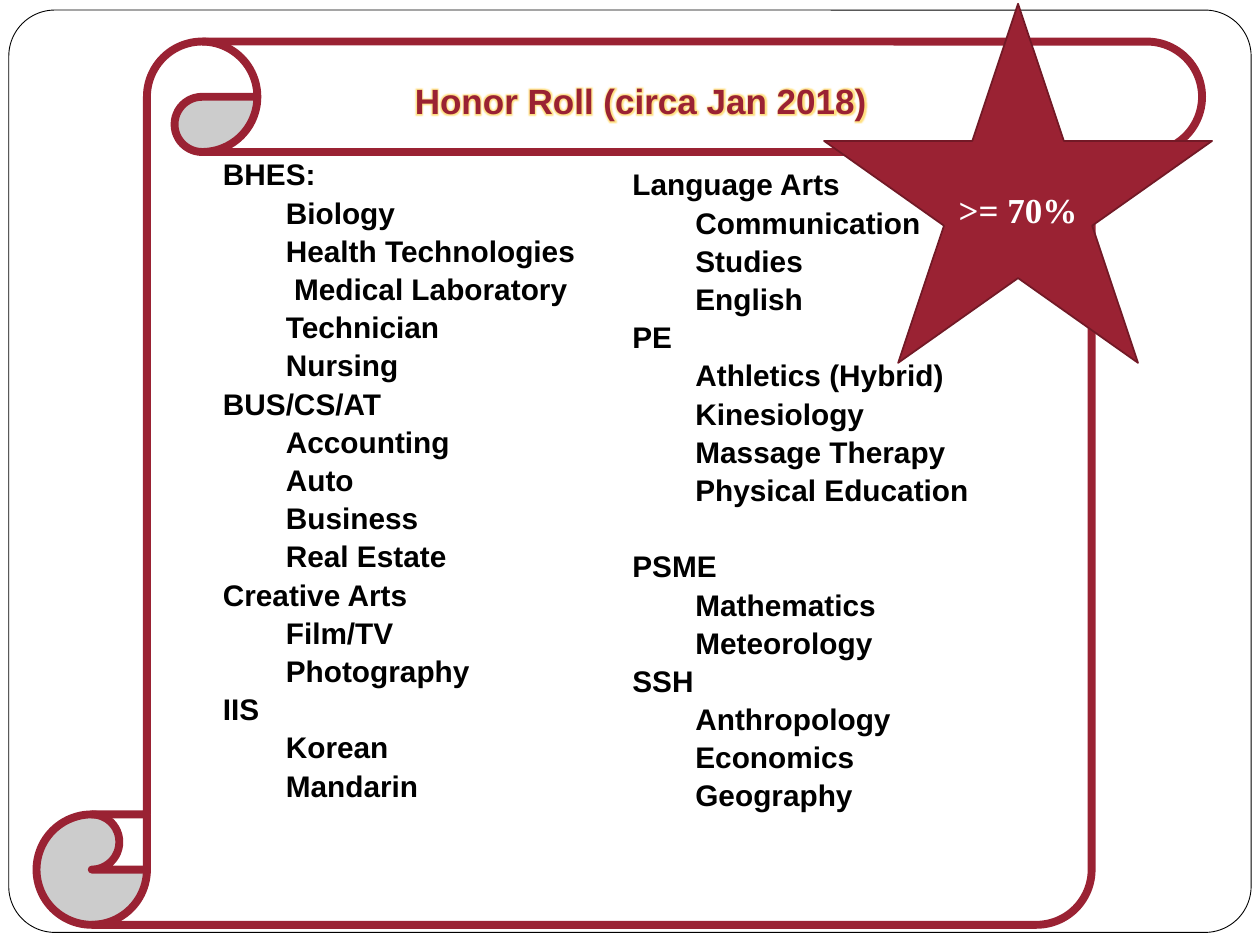
from lxml.etree import SubElement
from pptx import Presentation
from pptx.dml.color import RGBColor
from pptx.enum.shapes import MSO_SHAPE
from pptx.enum.text import MSO_ANCHOR, PP_ALIGN
from pptx.oxml.ns import qn
from pptx.util import Inches, Pt

WHITE = RGBColor(0xFF, 0xFF, 0xFF)
BLACK = RGBColor(0, 0, 0)
CRIMSON = RGBColor(0x9A, 0x22, 0x33)
DARK_CRIMSON = RGBColor(0x72, 0x19, 0x26)
GLOW = RGBColor(0xFF, 0xE0, 0x80)

TITLE = "Honor Roll (circa Jan 2018) "
THRESHOLD = ">= 70%"
LEFT_DIVISIONS = [
    ("BHES:", ["Biology", "Health Technologies",
               " Medical Laboratory Technician", "Nursing"]),
    ("BUS/CS/AT", ["Accounting", "Auto", "Business", "Real Estate"]),
    ("Creative Arts", ["Film/TV", "Photography"]),
    ("IIS", ["Korean", "Mandarin"]),
]
RIGHT_DIVISIONS = [
    ("Language Arts", ["Communication Studies", "English"]),
    ("PE", ["Athletics (Hybrid)", "Kinesiology", "Massage Therapy",
            "Physical Education"]),
    ("PSME", ["Mathematics", "Meteorology"]),
    ("SSH", ["Anthropology", "Economics", "Geography"]),
]
COLUMNS = [
    ((1.67, 1.17, 3.08, 5.31), LEFT_DIVISIONS),
    ((4.92, 1.25, 3.08, 6.06), RIGHT_DIVISIONS),
]
SPACED_DIVISION = "PSME"
LINE_SPACING = 1.07
LIST_SIZE = 17
ONE_LINE = Pt(21.8)


def add_panel(slide, kind, box, fill, line, width):
    shape = slide.shapes.add_shape(kind, *map(Inches, box))
    shape.shadow.inherit = False
    shape.fill.solid()
    shape.fill.fore_color.rgb = fill
    shape.line.color.rgb = line
    shape.line.width = Pt(width)
    return shape


def add_text_frame(slide, box):
    text_frame = slide.shapes.add_textbox(*map(Inches, box)).text_frame
    text_frame.word_wrap = True
    return text_frame


def write(paragraph, text, size, color, name="Arial"):
    paragraph.text = text
    font = paragraph.runs[0].font
    font.size = Pt(size)
    font.bold = True
    font.color.rgb = color
    font.name = name


def add_glow(run, color, radius):
    properties = run.font._element
    effects = SubElement(properties, qn("a:effectLst"))
    glow = SubElement(effects, qn("a:glow"), rad=str(Pt(radius)))
    SubElement(glow, qn("a:srgbClr"), val=str(color))
    properties.find(qn("a:solidFill")).addnext(effects)


def add_division_list(slide, box, divisions):
    text_frame = add_text_frame(slide, box)
    entries = [(text, level) for division, programs in divisions
               for text, level in [(division, 0)] + [(p, 1) for p in programs]]
    for index, (text, level) in enumerate(entries):
        paragraph = text_frame.add_paragraph() if index else text_frame.paragraphs[0]
        write(paragraph, text, LIST_SIZE, BLACK)
        paragraph.line_spacing = LINE_SPACING
        if level:
            paragraph._p.get_or_add_pPr().set("marL", str(Inches(0.5)))
        if text == SPACED_DIVISION:
            paragraph.space_before = ONE_LINE


def main():
    presentation = Presentation()
    presentation.slide_width = Inches(10)
    presentation.slide_height = Inches(7.5)
    slide = presentation.slides.add_slide(presentation.slide_layouts[6])

    frame = add_panel(slide, MSO_SHAPE.ROUNDED_RECTANGLE,
                      (0.07, 0.08, 9.86, 7.32), WHITE, BLACK, 0.5)
    frame.adjustments[0] = 0.05
    add_panel(slide, MSO_SHAPE.VERTICAL_SCROLL,
              (0.29, 0.33, 9.25, 7.01), WHITE, CRIMSON, 4.5)

    title = add_text_frame(slide, (2.75, 0.58, 4.75, 0.44)).paragraphs[0]
    write(title, TITLE, 20, CRIMSON)
    title.alignment = PP_ALIGN.CENTER
    add_glow(title.runs[0], GLOW, 5)

    for box, divisions in COLUMNS:
        add_division_list(slide, box, divisions)

    star = add_panel(slide, MSO_SHAPE.STAR_5_POINT,
                     (6.54, 0.03, 3.08, 2.85), CRIMSON, DARK_CRIMSON, 1)
    star.text_frame.vertical_anchor = MSO_ANCHOR.MIDDLE
    label = star.text_frame.paragraphs[0]
    write(label, THRESHOLD, 20, WHITE, "Times New Roman")
    label.alignment = PP_ALIGN.CENTER

    presentation.save("out.pptx")


if __name__ == "__main__":
    main()
